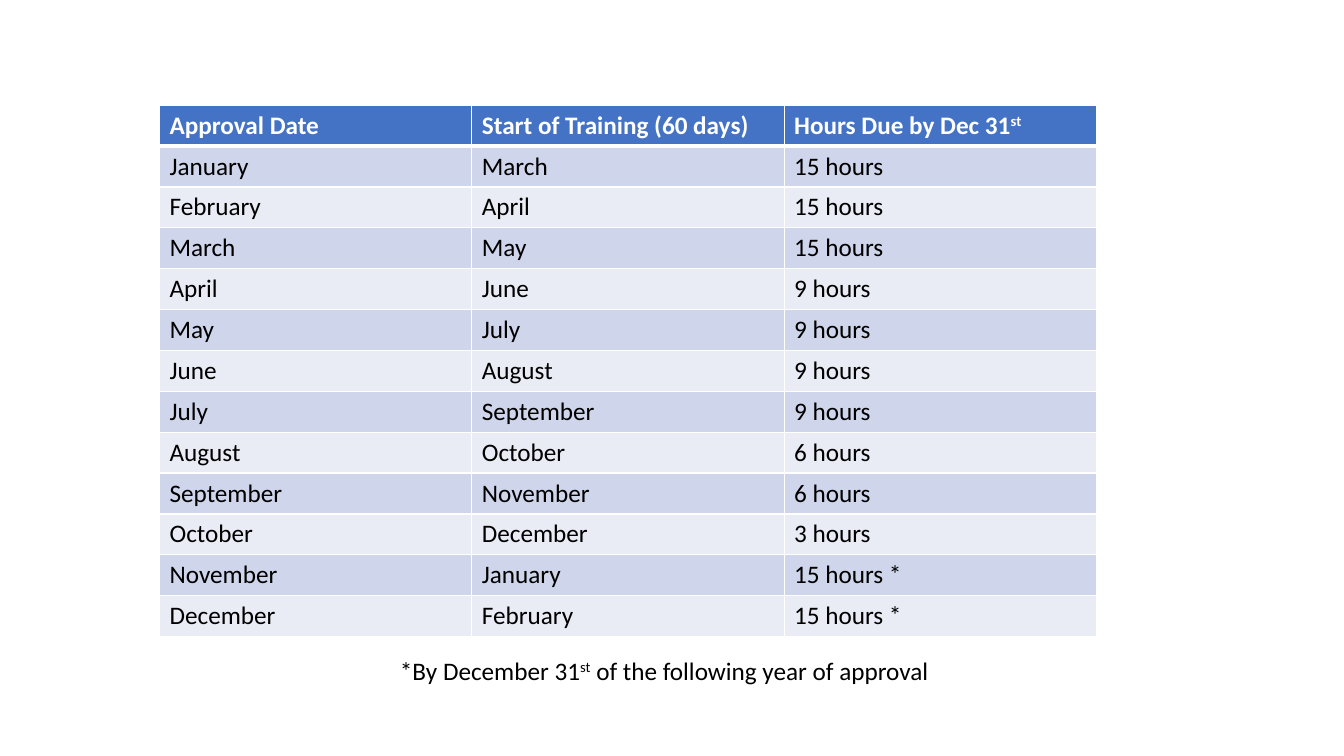
from typing import NamedTuple

import lxml.etree
import pptx
import pptx.dml.color
import pptx.oxml.ns
import pptx.util

Cm = pptx.util.Cm
Pt = pptx.util.Pt
RGB = pptx.dml.color.RGBColor
qn = pptx.oxml.ns.qn

WHITE = RGB(0xFF, 0xFF, 0xFF)
BLACK = RGB(0x00, 0x00, 0x00)
BLUE = RGB(0x44, 0x72, 0xC4)
BANDS = (RGB(0xE9, 0xEB, 0xF5), RGB(0xCF, 0xD5, 0xEA))

FONT = "Calibri"
SIZE = Pt(18)
COL_W = Cm(7.87)
ROW_H = Cm(1.03)


class Row(NamedTuple):
    approval: str
    start: str
    hours: str


MONTHS = ("January", "February", "March", "April", "May", "June", "July",
          "August", "September", "October", "November", "December")
HOURS = (["15 hours"] * 3 + ["9 hours"] * 4 + ["6 hours"] * 2
         + ["3 hours"] + ["15 hours *"] * 2)
HEAD = Row("Approval Date", "Start of Training (60 days)",
           "Hours Due by Dec 31^st")
ROWS = [HEAD] + [Row(month, MONTHS[(i + 2) % 12], HOURS[i])
                 for i, month in enumerate(MONTHS)]


def write(frame, text: str, color: RGB, bold: bool = False) -> None:
    """Fill a text frame; "^st" in the text becomes a raised "st"."""
    para = frame.paragraphs[0]
    para.font.name = FONT
    para.font.size = SIZE
    para.font.bold = bold
    para.font.color.rgb = color
    before, mark, after = text.partition("^st")
    for part in (before, mark, after):
        if part:
            run = para.add_run()
            run.text = part.lstrip("^")
            if part == mark:
                run.font.size = SIZE
                run._r.get_or_add_rPr().set("baseline", "30000")


def edge(cell, top: float, bottom: float) -> None:
    """Draw white cell borders; widths are in points."""
    props = cell._tc.get_or_add_tcPr()
    sides = (("a:lnL", 1), ("a:lnR", 1), ("a:lnT", top), ("a:lnB", bottom))
    for place, (tag, width) in enumerate(sides):
        line = lxml.etree.Element(qn(tag), w=str(int(Pt(width))))
        fill = lxml.etree.SubElement(line, qn("a:solidFill"))
        lxml.etree.SubElement(fill, qn("a:srgbClr"), val=str(WHITE))
        props.insert(place, line)


def add_hours(slide) -> None:
    count = len(ROWS)
    table = slide.shapes.add_table(count, 3, Cm(4.02), Cm(2.65),
                                   COL_W * 3, ROW_H * count).table
    for col in table.columns:
        col.width = COL_W
    for r, row in enumerate(ROWS):
        table.rows[r].height = ROW_H
        head = r == 0
        for c, text in enumerate(row):
            cell = table.cell(r, c)
            cell.fill.solid()
            cell.fill.fore_color.rgb = BLUE if head else BANDS[r % 2]
            edge(cell, 3 if r == 1 else 1, 3 if head else 1)
            write(cell.text_frame, text, WHITE if head else BLACK, head)


def add_note(slide) -> None:
    box = slide.shapes.add_textbox(Cm(9.83), Cm(16.38), Cm(20.8), ROW_H)
    box.text_frame.word_wrap = True
    write(box.text_frame,
          "*By December 31^st of the following year of approval", BLACK)


def main() -> None:
    deck = pptx.Presentation()
    deck.slide_width = Cm(33.87)
    deck.slide_height = Cm(19.05)
    slide = deck.slides.add_slide(deck.slide_layouts[6])
    add_hours(slide)
    add_note(slide)
    deck.save("out.pptx")


if __name__ == "__main__":
    main()
